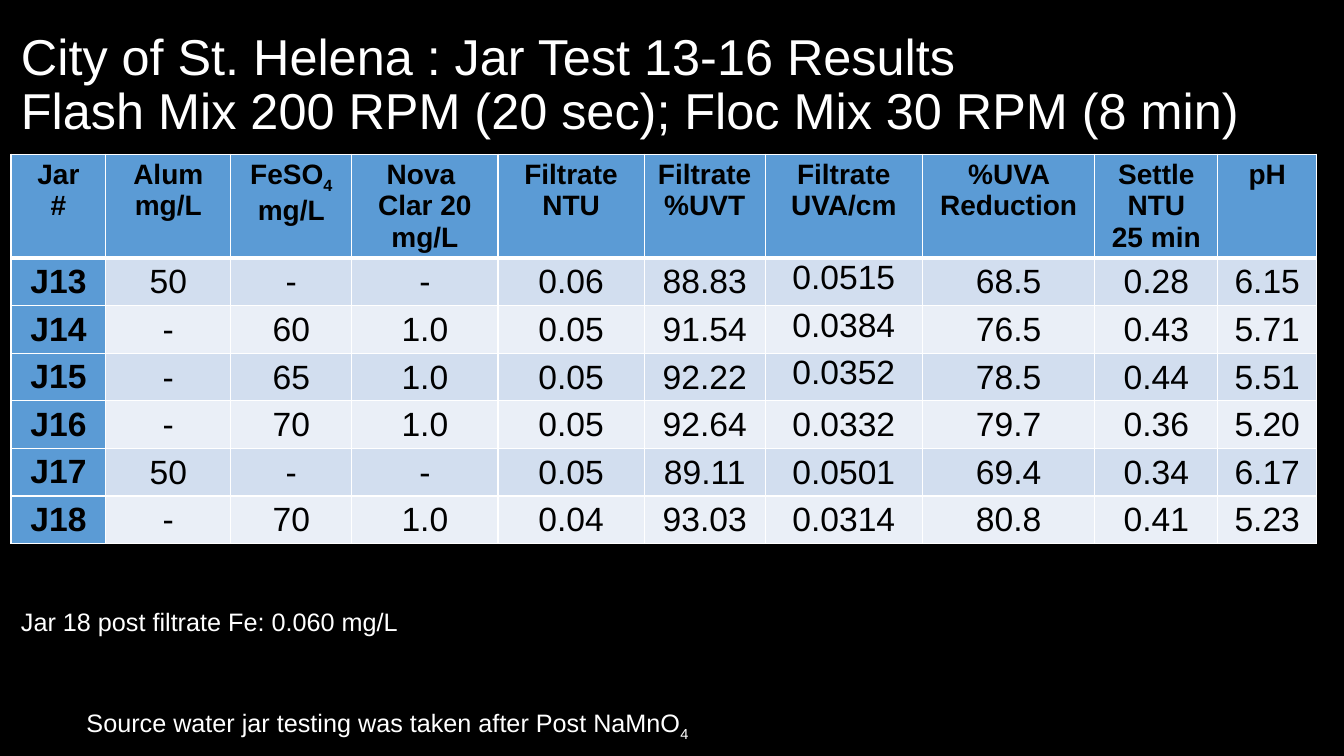
from dataclasses import dataclass

from lxml.etree import SubElement
from pptx import Presentation
from pptx.dml.color import RGBColor
from pptx.enum.text import MSO_ANCHOR, PP_ALIGN
from pptx.oxml.ns import qn
from pptx.slide import Slide
from pptx.table import _Cell
from pptx.text.text import TextFrame, _Paragraph
from pptx.util import Emu, Pt

FONT = "Arial"
BLACK = RGBColor(0x00, 0x00, 0x00)
WHITE = RGBColor(0xFF, 0xFF, 0xFF)
HEADER_BLUE = RGBColor(0x5B, 0x9B, 0xD5)
BAND_COLORS = (RGBColor(0xD2, 0xDE, 0xEF), RGBColor(0xEA, 0xEF, 0xF7))

EMU_PER_PX = 9144  # 100 px to the inch


@dataclass(frozen=True)
class Box:
    left: int
    top: int
    width: int
    height: int

    def emu(self) -> tuple[Emu, Emu, Emu, Emu]:
        return px(self.left), px(self.top), px(self.width), px(self.height)


@dataclass(frozen=True)
class Column:
    heading: str
    width: int
    values: tuple[str, ...]
    top_aligned_rows: int = 0


@dataclass(frozen=True)
class Label:
    text: str
    box: Box
    size: int
    wrap: bool = False
    anchor: MSO_ANCHOR = MSO_ANCHOR.TOP
    line_spacing: float = 1.0


TABLE_BOX = Box(11, 153, 1296, 410)
HEADER_HEIGHT = 55
ROW_HEIGHT = 41

JARS = Column("Jar\n#", 94, ("J13", "J14", "J15", "J16", "J17", "J18"))
MEASUREMENTS = (
    Column("Alum\nmg/L", 124, ("50", "-", "-", "-", "50", "-")),
    Column("FeSO_4\nmg/L", 120, ("-", "60", "65", "70", "-", "70")),
    Column("Nova \nClar 20\nmg/L", 145, ("-", "1.0", "1.0", "1.0", "-", "1.0")),
    Column("Filtrate\nNTU", 145, ("0.06", "0.05", "0.05", "0.05", "0.05", "0.04")),
    Column("Filtrate\n%UVT", 120, ("88.83", "91.54", "92.22", "92.64", "89.11", "93.03")),
    Column("Filtrate\nUVA/cm", 156,
           ("0.0515", "0.0384", "0.0352", "0.0332", "0.0501", "0.0314"), top_aligned_rows=3),
    Column("%UVA Reduction", 171, ("68.5", "76.5", "78.5", "79.7", "69.4", "80.8")),
    Column("Settle\nNTU\n25 min", 122, ("0.28", "0.43", "0.44", "0.36", "0.34", "0.41")),
    Column("pH", 98, ("6.15", "5.71", "5.51", "5.20", "6.17", "5.23")),
)
LABELS = (
    Label("City of St. Helena : Jar Test 13-16 Results\v"
          "Flash Mix 200 RPM (20 sec); Floc Mix 30 RPM (8 min)",
          Box(11, 13, 1280, 145), 36, True, MSO_ANCHOR.MIDDLE, 0.9),
    Label("Source water jar testing was taken after Post NaMnO_4", Box(76, 697, 624, 40), 18),
    Label("Jar 18 post filtrate Fe: 0.060 mg/L", Box(11, 597, 397, 40), 18),
)


def px(length: int) -> Emu:
    return Emu(length * EMU_PER_PX)


def add_run(paragraph: _Paragraph, text: str, size: int, color: RGBColor,
            bold: bool, subscript: bool) -> None:
    run = paragraph.add_run()
    run.text = text
    run.font.name = FONT
    run.font.size = Pt(size)
    run.font.bold = bold
    run.font.color.rgb = color
    if subscript:
        run._r.get_or_add_rPr().set("baseline", "-25000")


def write_text(frame: TextFrame, text: str, *, size: int, color: RGBColor,
               bold: bool = False, align: PP_ALIGN = PP_ALIGN.LEFT,
               line_spacing: float = 1.0) -> None:
    """Fill the frame: \\n starts a paragraph, \\v breaks a line, _ precedes a subscript."""
    for index, paragraph_text in enumerate(text.split("\n")):
        paragraph = frame.add_paragraph() if index else frame.paragraphs[0]
        paragraph.alignment = align
        paragraph.line_spacing = line_spacing
        for line_index, line in enumerate(paragraph_text.split("\v")):
            if line_index:
                paragraph.add_line_break()
            for part_index, part in enumerate(line.split("_")):
                add_run(paragraph, part, size, color, bold, subscript=part_index > 0)


def add_label(slide: Slide, label: Label) -> None:
    frame = slide.shapes.add_textbox(*label.box.emu()).text_frame
    frame.word_wrap = label.wrap
    frame.vertical_anchor = label.anchor
    write_text(frame, label.text, size=label.size, color=WHITE,
               line_spacing=label.line_spacing)


def style_cell(cell: _Cell, color: RGBColor, top: int = 1, bottom: int = 1) -> None:
    """Give the cell white borders, with widths in points, and a solid fill."""
    properties = cell._tc.get_or_add_tcPr()
    for tag, width in (("a:lnL", 1), ("a:lnR", 1), ("a:lnT", top), ("a:lnB", bottom)):
        line = SubElement(properties, qn(tag), w=str(Pt(width)))
        fill = SubElement(line, qn("a:solidFill"))
        SubElement(fill, qn("a:srgbClr"), val=str(WHITE))
    cell.fill.solid()
    cell.fill.fore_color.rgb = color


def fill_value_cell(cell: _Cell, value: str, anchor: MSO_ANCHOR) -> None:
    cell.margin_left = cell.margin_right = cell.margin_top = px(1)
    cell.margin_bottom = 0
    cell.vertical_anchor = anchor
    write_text(cell.text_frame, value, size=24, color=BLACK, align=PP_ALIGN.CENTER)


def add_results_table(slide: Slide) -> None:
    columns = (JARS, *MEASUREMENTS)
    row_count = len(JARS.values) + 1
    graphic_frame = slide.shapes.add_table(row_count, len(columns), *TABLE_BOX.emu())
    table = graphic_frame.table
    for row_index, row in enumerate(table.rows):
        row.height = px(ROW_HEIGHT if row_index else HEADER_HEIGHT)
    for column_index, column in enumerate(columns):
        table.columns[column_index].width = px(column.width)
        heading = table.cell(0, column_index)
        style_cell(heading, HEADER_BLUE, bottom=3)
        write_text(heading.text_frame, column.heading, size=20, color=BLACK,
                   bold=True, align=PP_ALIGN.CENTER)
        for value_index, value in enumerate(column.values):
            cell = table.cell(value_index + 1, column_index)
            is_jar = column is JARS
            band = BAND_COLORS[value_index % len(BAND_COLORS)]
            style_cell(cell, HEADER_BLUE if is_jar else band, top=1 if value_index else 3)
            if is_jar:
                write_text(cell.text_frame, value, size=24, color=BLACK,
                           bold=True, align=PP_ALIGN.CENTER)
            else:
                at_top = value_index < column.top_aligned_rows
                fill_value_cell(cell, value, MSO_ANCHOR.TOP if at_top else MSO_ANCHOR.MIDDLE)
    graphic_frame.height = px(TABLE_BOX.height)


def main() -> None:
    presentation = Presentation()
    presentation.slide_width = px(1333)
    presentation.slide_height = px(750)
    slide = presentation.slides.add_slide(presentation.slide_layouts[6])
    slide.background.fill.solid()
    slide.background.fill.fore_color.rgb = BLACK
    add_results_table(slide)
    for label in LABELS:
        add_label(slide, label)
    presentation.save("out.pptx")


if __name__ == "__main__":
    main()
